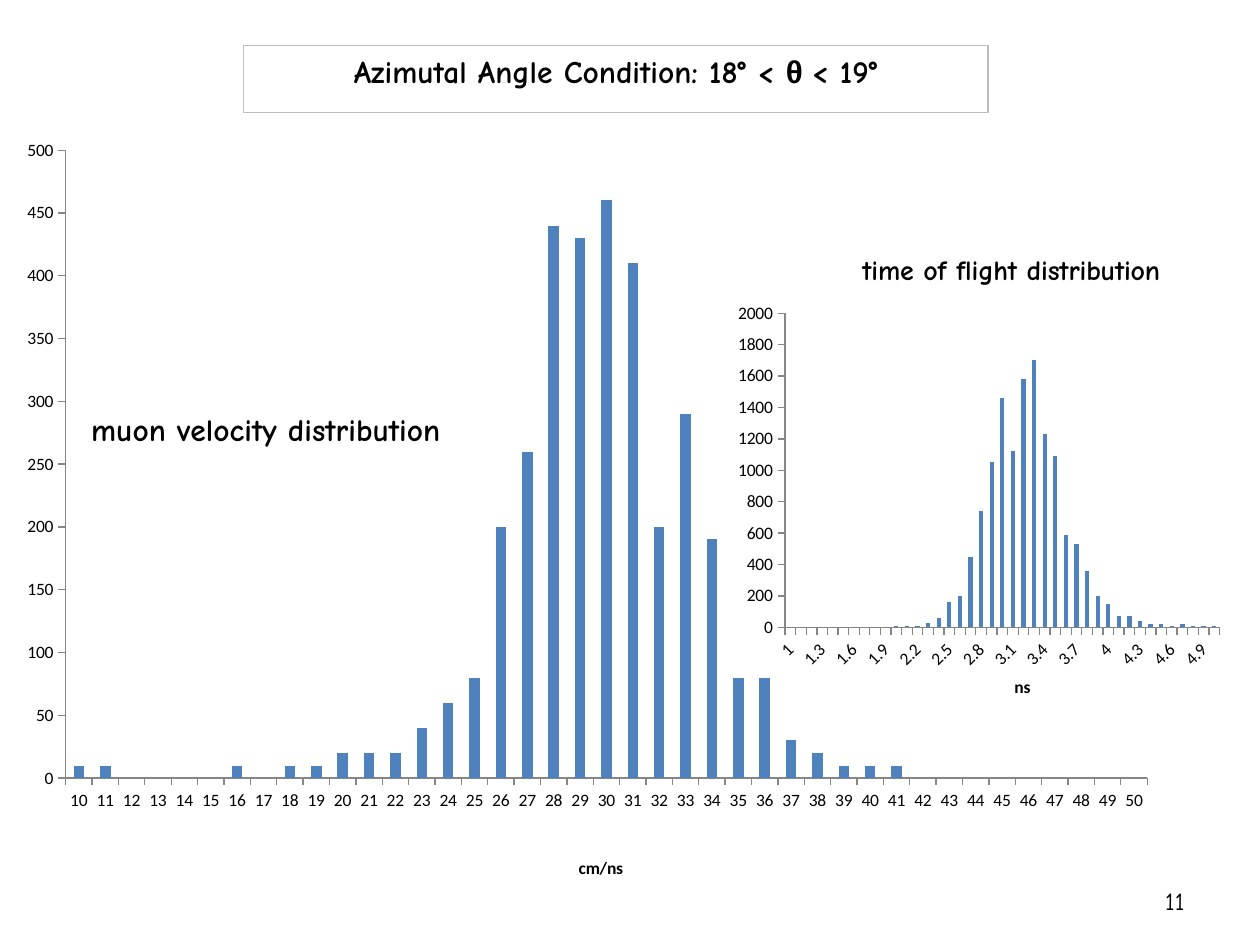
"""Build a slide with muon velocity and time of flight histograms."""
from lxml import etree
from pptx import Presentation
from pptx.chart.data import CategoryChartData
from pptx.dml.color import RGBColor
from pptx.enum.chart import XL_CHART_TYPE, XL_TICK_MARK
from pptx.enum.text import MSO_ANCHOR, MSO_AUTO_SIZE, PP_ALIGN
from pptx.oxml import parse_xml
from pptx.oxml.ns import nsdecls, qn
from pptx.util import Pt

COLUMNS = XL_CHART_TYPE.COLUMN_CLUSTERED
OUTSIDE = XL_TICK_MARK.OUTSIDE
TOP, MIDDLE = MSO_ANCHOR.TOP, MSO_ANCHOR.MIDDLE
CENTER, RIGHT = PP_ALIGN.CENTER, PP_ALIGN.RIGHT
NO_FIT = MSO_AUTO_SIZE.NONE
FIT_SHAPE = MSO_AUTO_SIZE.SHAPE_TO_FIT_TEXT

COLORS = {"text": "000000", "bar": "4F81BD", "axis": "868686",
          "box": "FFFFFF", "border": "BDBDBD"}
HAND, BODY, GREEK = "Comic Neue", "Calibri", "Arial"

HEADING = [("Azimutal Angle Condition: 18° < ", HAND), ("θ ", GREEK),
           ("< 19°", HAND)]
VELOCITY = {
    "box": (2.2, 25.9, 666.7, 478.8),
    "title": "muon velocity distribution", "size": 18, "title_at": (0.07, 0.43),
    "plot": (0.053, 0.126, 0.927, 0.754),
    "unit": "cm/ns", "unit_at": (0.49, 0.97),
    "cats": [str(v) for v in range(10, 51)],
    "vals": [10, 10, 0, 0, 0, 0, 10, 0, 10, 10, 20, 20, 20, 40, 60, 80, 200,
             260, 440, 430, 460, 410, 200, 290, 190, 80, 80, 30, 20, 10, 10,
             10, 0, 0, 0, 0, 0, 0, 0, 0, 0],
    "max": 500, "step": 50, "turn": 0,
}
FLIGHT = {
    "box": (416.9, 128.2, 317.5, 260.6),
    "title": "time of flight distribution", "size": 16, "title_at": (0.23, 0.05),
    "plot": (0.1, 0.195, 0.782, 0.689),
    "cats": [f"{v / 10:g}" for v in range(10, 51)],
    "vals": [0, 0, 0, 0, 0, 0, 0, 0, 0, 0, 10, 10, 10, 30, 60, 160, 200, 450,
             740, 1050, 1460, 1120, 1580, 1700, 1230, 1090, 590, 530, 360, 200,
             150, 70, 70, 40, 20, 20, 10, 20, 10, 10, 10],
    "max": 2000, "step": 200, "turn": -45,
}


def rgb(name):
    return RGBColor.from_string(COLORS[name])


def write(tf, text, font=BODY, size=10, bold=False, align=None):
    p = tf.paragraphs[0]
    if align is not None:
        p.alignment = align
    r = p.add_run()
    r.text = text
    r.font.name, r.font.size, r.font.bold = font, Pt(size), bold
    r.font.color.rgb = rgb("text")


def place(sp, box):
    sp.left, sp.top, sp.width, sp.height = map(Pt, box)


def set_layout(el, index, fractions, inner=False):
    for old in el.findall(qn("c:layout")):
        el.remove(old)
    layout = parse_xml(f"<c:layout {nsdecls('c')}><c:manualLayout/></c:layout>")
    settings = [("layoutTarget", "inner")] if inner else []
    settings += [("xMode", "edge"), ("yMode", "edge")]
    settings += zip("xywh", fractions)
    for tag, value in settings:
        etree.SubElement(layout[0], qn(f"c:{tag}")).set("val", str(value))
    el.insert(index, layout)


def add_histogram(s, spec_):
    data = CategoryChartData()
    data.categories = spec_["cats"]
    data.add_series("Series 1", spec_["vals"])
    chart = s.shapes.add_chart(COLUMNS, *map(Pt, spec_["box"]), data).chart
    chart.has_legend = False
    chart.font.name, chart.font.size = BODY, Pt(10)
    chart.font.color.rgb = rgb("text")
    space = chart.element
    space.find(qn("c:chart")).addnext(parse_xml(
        f"<c:spPr {nsdecls('c', 'a')}><a:noFill/><a:ln><a:noFill/></a:ln></c:spPr>"))
    set_layout(space.find(".//" + qn("c:plotArea")), 0, spec_["plot"], inner=True)

    chart.has_title = True
    write(chart.chart_title.text_frame, spec_["title"], HAND, spec_["size"], True)
    set_layout(chart.chart_title._element, 1, spec_["title_at"])

    plot = chart.plots[0]
    plot.gap_width, plot.vary_by_categories = 150, False
    fill = plot.series[0].format.fill
    fill.solid()
    fill.fore_color.rgb = rgb("bar")

    cat, val = chart.category_axis, chart.value_axis
    for axis in (cat, val):
        axis.has_major_gridlines = False
        axis.major_tick_mark = OUTSIDE
        axis.format.line.color.rgb = rgb("axis")
    val.minimum_scale, val.maximum_scale = 0, spec_["max"]
    val.major_unit = spec_["step"]
    if spec_["turn"]:
        cat.tick_labels.font.size = Pt(10)
        body = cat._element.find(qn("c:txPr")).find(qn("a:bodyPr"))
        body.set("rot", str(spec_["turn"] * 60000))
    if "unit" in spec_:
        write(cat.axis_title.text_frame, spec_["unit"], bold=True)
        set_layout(cat.axis_title._element, 1, spec_["unit_at"])


def add_heading(s):
    sp = s.shapes.title
    place(sp, (139, 25.9, 425.5, 38.2))
    sp.fill.solid()
    sp.fill.fore_color.rgb = rgb("box")
    sp.line.color.rgb, sp.line.width = rgb("border"), Pt(0.75)
    tf = sp.text_frame
    tf.auto_size, tf.vertical_anchor = NO_FIT, TOP
    for text, font in HEADING:
        write(tf, text, font, 18, True, CENTER)
    s.shapes._spTree.append(sp._element)


def add_label(s, box, text, wrap, fit, anchor, **fmt):
    tf = s.shapes.add_textbox(*map(Pt, box)).text_frame
    tf.word_wrap, tf.auto_size, tf.vertical_anchor = wrap, fit, anchor
    write(tf, text, **fmt)


def main():
    prs = Presentation()
    prs.slide_width, prs.slide_height = Pt(720), Pt(540)
    s = prs.slides.add_slide(prs.slide_layouts[5])
    add_histogram(s, VELOCITY)
    add_heading(s)
    add_histogram(s, FLIGHT)
    add_label(s, (516.2, 500.4, 167.8, 28.8), "11", True, NO_FIT, MIDDLE,
              font=HAND, size=14, align=RIGHT)
    add_label(s, (572.4, 383, 23.8, 19.4), "ns", False, FIT_SHAPE, TOP,
              bold=True, align=CENTER)
    prs.save("out.pptx")


if __name__ == "__main__":
    main()
